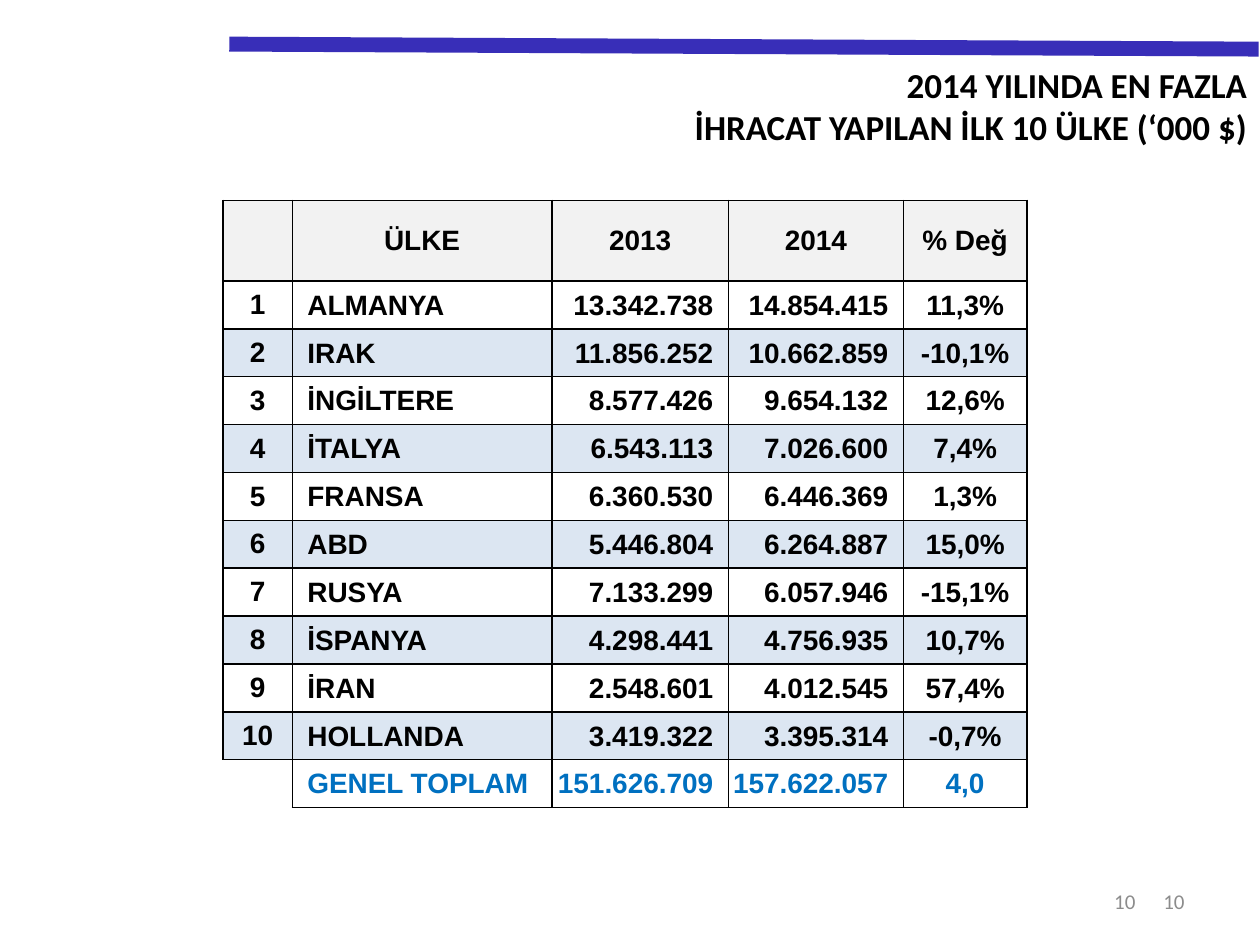
from lxml import etree
from pptx import Presentation
from pptx.dml.color import RGBColor
from pptx.enum.shapes import MSO_CONNECTOR
from pptx.enum.text import MSO_ANCHOR, MSO_AUTO_SIZE, PP_ALIGN
from pptx.oxml.ns import qn
from pptx.util import Inches, Pt

LEFT, CENTER, RIGHT = PP_ALIGN.LEFT, PP_ALIGN.CENTER, PP_ALIGN.RIGHT
TOP, MIDDLE = MSO_ANCHOR.TOP, MSO_ANCHOR.MIDDLE
BLACK = RGBColor(0x00, 0x00, 0x00)
GRAY = RGBColor(0x8C, 0x8C, 0x8C)
INDIGO = RGBColor(0x38, 0x2E, 0xB8)
TOTAL_BLUE = RGBColor(0x00, 0x70, 0xC0)
HEADER_FILL = RGBColor(0xF2, 0xF2, 0xF2)
BAND_FILL = RGBColor(0xDC, 0xE6, 0xF2)

TITLE = ["2014 YILINDA EN FAZLA", "İHRACAT YAPILAN İLK 10 ÜLKE (‘000 $)"]
HEADER = ["", "ÜLKE", "2013", "2014", "% Değ"]
COUNTRIES = [
    ("ALMANYA", "13.342.738", "14.854.415", "11,3%"),
    ("IRAK", "11.856.252", "10.662.859", "-10,1%"),
    ("İNGİLTERE", "8.577.426", "9.654.132", "12,6%"),
    ("İTALYA", "6.543.113", "7.026.600", "7,4%"),
    ("FRANSA", "6.360.530", "6.446.369", "1,3%"),
    ("ABD", "5.446.804", "6.264.887", "15,0%"),
    ("RUSYA", "7.133.299", "6.057.946", "-15,1%"),
    ("İSPANYA", "4.298.441", "4.756.935", "10,7%"),
    ("İRAN", "2.548.601", "4.012.545", "57,4%"),
    ("HOLLANDA", "3.419.322", "3.395.314", "-0,7%"),
]
TOTAL = ["", "GENEL TOPLAM", "151.626.709", "157.622.057", "4,0"]

COL_WIDTHS = [0.55, 2.06, 1.4, 1.39, 0.98]
HEADER_HEIGHT, ROW_HEIGHT = 0.64, 0.38
ALIGNS = [CENTER, LEFT, RIGHT, RIGHT, CENTER]
WIDE_INSETS = (0.1, 0.05, 0.1, 0.05)
INSETS = [WIDE_INSETS, (0.12, 0.01, 0.01, 0), (0.01, 0.01, 0.12, 0),
          (0.01, 0.01, 0.12, 0), (0.01, 0.01, 0.01, 0)]
MARGINS = ("margin_left", "margin_top", "margin_right", "margin_bottom")


def write_lines(tf, lines, align, color, **font):
    for i, line in enumerate(lines):
        p = tf.paragraphs[0] if i == 0 else tf.add_paragraph()
        p.alignment = align
        r = p.add_run()
        r.text = line
        r.font.color.rgb = color
        for name, value in font.items():
            setattr(r.font, name, value)


def add_title(s):
    sp = s.shapes.title
    sp.left, sp.top, sp.width, sp.height = map(Inches, (1.06, 0.45, 8.94, 0.77))
    tf = sp.text_frame
    tf.word_wrap = True
    tf.auto_size = MSO_AUTO_SIZE.SHAPE_TO_FIT_TEXT
    tf.vertical_anchor = TOP
    write_lines(tf, TITLE, RIGHT, BLACK, name="Calibri", size=Pt(20), bold=True)


def add_rule(s):
    line = s.shapes.add_connector(MSO_CONNECTOR.STRAIGHT, Inches(1.82), Inches(0.35),
                                  Inches(9.99), Inches(0.39))
    line.line.color.rgb = INDIGO
    line.line.width = Pt(8.5)
    etree.SubElement(line.element.spPr, qn("a:effectLst"))


def add_page_number(s, left, width):
    sp = s.shapes.add_textbox(Inches(left), Inches(6.95), Inches(width), Inches(0.4))
    tf = sp.text_frame
    tf.word_wrap = True
    tf.vertical_anchor = MIDDLE
    write_lines(tf, ["10"], RIGHT, GRAY, name="Calibri", size=Pt(12))


def set_borders(cell, visible):
    """Draw black 1 pt lines on the visible sides (letters of LRTB), none on the rest."""
    tc_pr = cell._tc.get_or_add_tcPr()
    for side in "LRTB":
        ln = etree.SubElement(tc_pr, qn(f"a:ln{side}"), w=str(Pt(1)))
        if side in visible:
            fill = etree.SubElement(ln, qn("a:solidFill"))
            etree.SubElement(fill, qn("a:srgbClr"), val=str(BLACK))
        else:
            etree.SubElement(ln, qn("a:noFill"))


def fill_cell(cell, text, align, insets, color, fill, borders):
    for name, inset in zip(MARGINS, insets):
        setattr(cell, name, Inches(inset))
    cell.vertical_anchor = MIDDLE
    set_borders(cell, borders)
    if fill is None:
        cell.fill.background()
    else:
        cell.fill.solid()
        cell.fill.fore_color.rgb = fill
    if text:
        write_lines(cell.text_frame, [text], align, color,
                    name="Arial", size=Pt(16), bold=True)


def add_export_table(s):
    ranked = [(str(n), *row) for n, row in enumerate(COUNTRIES, 1)]
    rows = [HEADER, *ranked, TOTAL]
    last = len(rows) - 1
    height = HEADER_HEIGHT + last * ROW_HEIGHT
    table = s.shapes.add_table(len(rows), len(COL_WIDTHS), Inches(1.77), Inches(1.59),
                               Inches(sum(COL_WIDTHS)), Inches(height)).table
    table.first_row = table.horz_banding = False
    for col, width in zip(table.columns, COL_WIDTHS):
        col.width = Inches(width)
    for i, values in enumerate(rows):
        is_header, is_total = i == 0, i == last
        table.rows[i].height = Inches(HEADER_HEIGHT if is_header else ROW_HEIGHT)
        band = BAND_FILL if i % 2 == 0 and not is_total else None
        for j, text in enumerate(values):
            fill_cell(table.cell(i, j), text,
                      align=CENTER if is_header else ALIGNS[j],
                      insets=WIDE_INSETS if is_header else INSETS[j] if text else (0,) * 4,
                      color=TOTAL_BLUE if is_total else BLACK,
                      fill=HEADER_FILL if is_header else band,
                      borders="RT" if is_total and j == 0 else "LRTB")


def main():
    prs = Presentation()
    prs.slide_width, prs.slide_height = Inches(10), Inches(7.5)
    s = prs.slides.add_slide(prs.slide_layouts.get_by_name("Title Only"))
    add_page_number(s, 7.17, 2.33)
    add_rule(s)
    add_page_number(s, 7.01, 2.1)
    add_title(s)
    add_export_table(s)
    prs.save("out.pptx")


if __name__ == "__main__":
    main()
